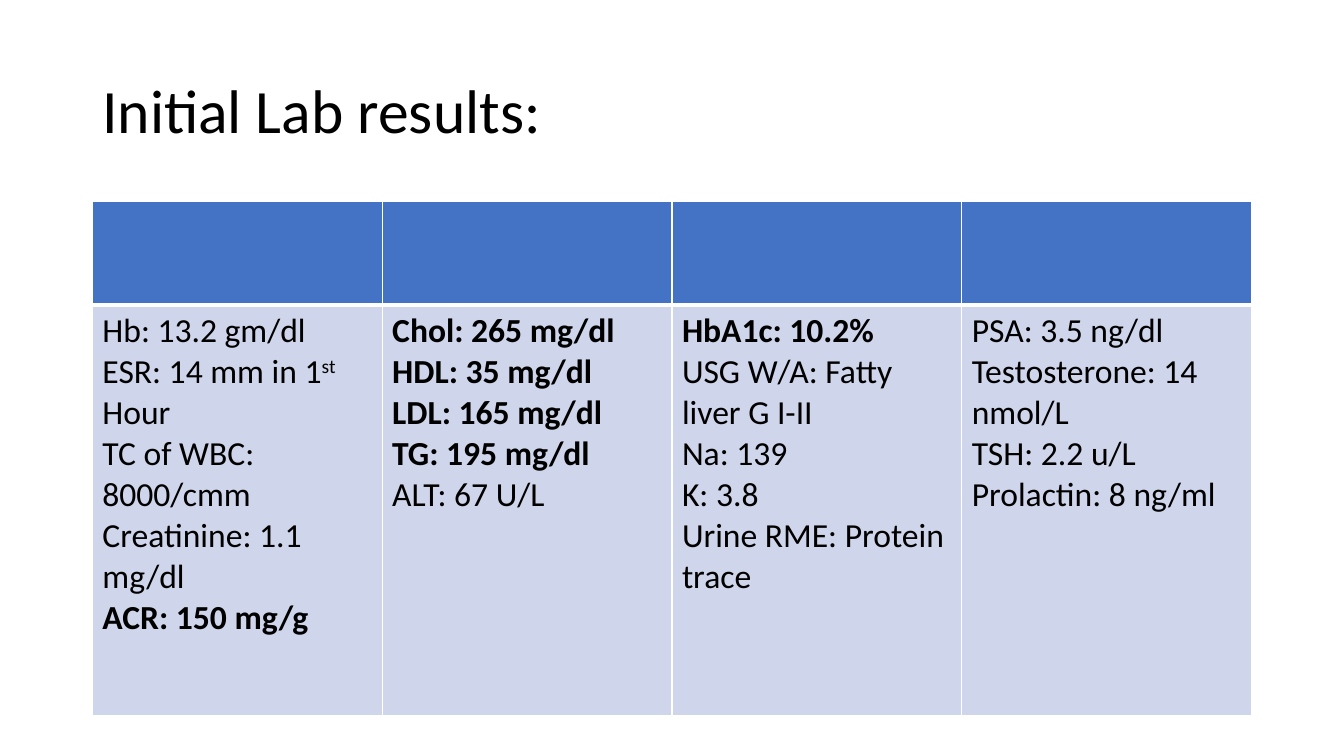
import pptx
import pptx.dml.color
import pptx.enum.text
import pptx.oxml
import pptx.oxml.ns
import pptx.util

Pt = pptx.util.Pt
FONT = "Calibri"
BLACK, WHITE, HEADER_BLUE, BODY_BLUE = "000000", "FFFFFF", "4472C4", "CFD5EA"
LEFT, WIDTH = 66, 828

# Each result is (text, bold); carets enclose a superscript
RESULTS = [
    [("Hb: 13.2 gm/dl", False), ("ESR: 14 mm in 1^st^ Hour", False),
     ("TC of WBC: 8000/cmm", False), ("Creatinine: 1.1 mg/dl", False),
     ("ACR: 150 mg/g", True)],
    [("Chol: 265 mg/dl", True), ("HDL: 35 mg/dl", True),
     ("LDL: 165 mg/dl", True), ("TG: 195 mg/dl", True),
     ("ALT: 67 U/L", False)],
    [("HbA1c: 10.2%", True), ("USG W/A: Fatty liver G I-II", False),
     ("Na: 139", False), ("K: 3.8", False),
     ("Urine RME: Protein trace", False)],
    [("PSA: 3.5 ng/dl", False), ("Testosterone: 14 nmol/L", False),
     ("TSH: 2.2 u/L", False), ("Prolactin: 8 ng/ml", False)],
]


def color(value):
    return pptx.dml.color.RGBColor.from_string(value)


def format_span(span, size, bold=False):
    span.font.name = FONT
    span.font.size = Pt(size)
    span.font.bold = bold
    span.font.color.rgb = color(BLACK)


def add_title(page, text):
    box = page.shapes.add_textbox(Pt(LEFT), Pt(28.8), Pt(WIDTH), Pt(104.4))
    frame = box.text_frame
    frame.word_wrap = True
    frame.vertical_anchor = pptx.enum.text.MSO_ANCHOR.MIDDLE
    frame.text = text
    para = frame.paragraphs[0]
    para.line_spacing = 0.9
    format_span(para.runs[0], 44)


def style_cell(cell, fill, top, bottom):
    # Borders come before the fill in the cell properties
    properties = cell._tc.get_or_add_tcPr()
    for side, weight in (("L", 1), ("R", 1), ("T", top), ("B", bottom)):
        properties.append(pptx.oxml.parse_xml(
            f'<a:ln{side} {pptx.oxml.ns.nsdecls("a")} w="{Pt(weight)}">'
            f'<a:solidFill><a:srgbClr val="{WHITE}"/></a:solidFill></a:ln{side}>'))
    cell.fill.solid()
    cell.fill.fore_color.rgb = color(fill)


def write_results(cell, results):
    frame = cell.text_frame
    for index, (text, bold) in enumerate(results):
        para = frame.add_paragraph() if index else frame.paragraphs[0]
        for position, part in enumerate(text.split("^")):
            span = para.add_run()
            span.text = part
            format_span(span, 24, bold)
            if position % 2:
                span._r.get_or_add_rPr().set("baseline", "30000")


def add_results_table(page, columns):
    heights = (74, 293)
    frame = page.shapes.add_table(
        2, len(columns), Pt(LEFT), Pt(144), Pt(WIDTH), Pt(sum(heights)))
    table = frame.table
    table.horz_banding = False
    for row, height in zip(table.rows, heights):
        row.height = Pt(height)
    for index, results in enumerate(columns):
        table.columns[index].width = Pt(WIDTH / len(columns))
        style_cell(table.cell(0, index), HEADER_BLUE, 1, 3)
        style_cell(table.cell(1, index), BODY_BLUE, 3, 1)
        write_results(table.cell(1, index), results)


def main():
    deck = pptx.Presentation()
    deck.slide_width, deck.slide_height = Pt(960), Pt(540)
    page = deck.slides.add_slide(deck.slide_layouts[6])
    # Heading
    add_title(page, "Initial Lab results:")
    # Laboratory values
    add_results_table(page, RESULTS)
    deck.save("out.pptx")


if __name__ == "__main__":
    main()
